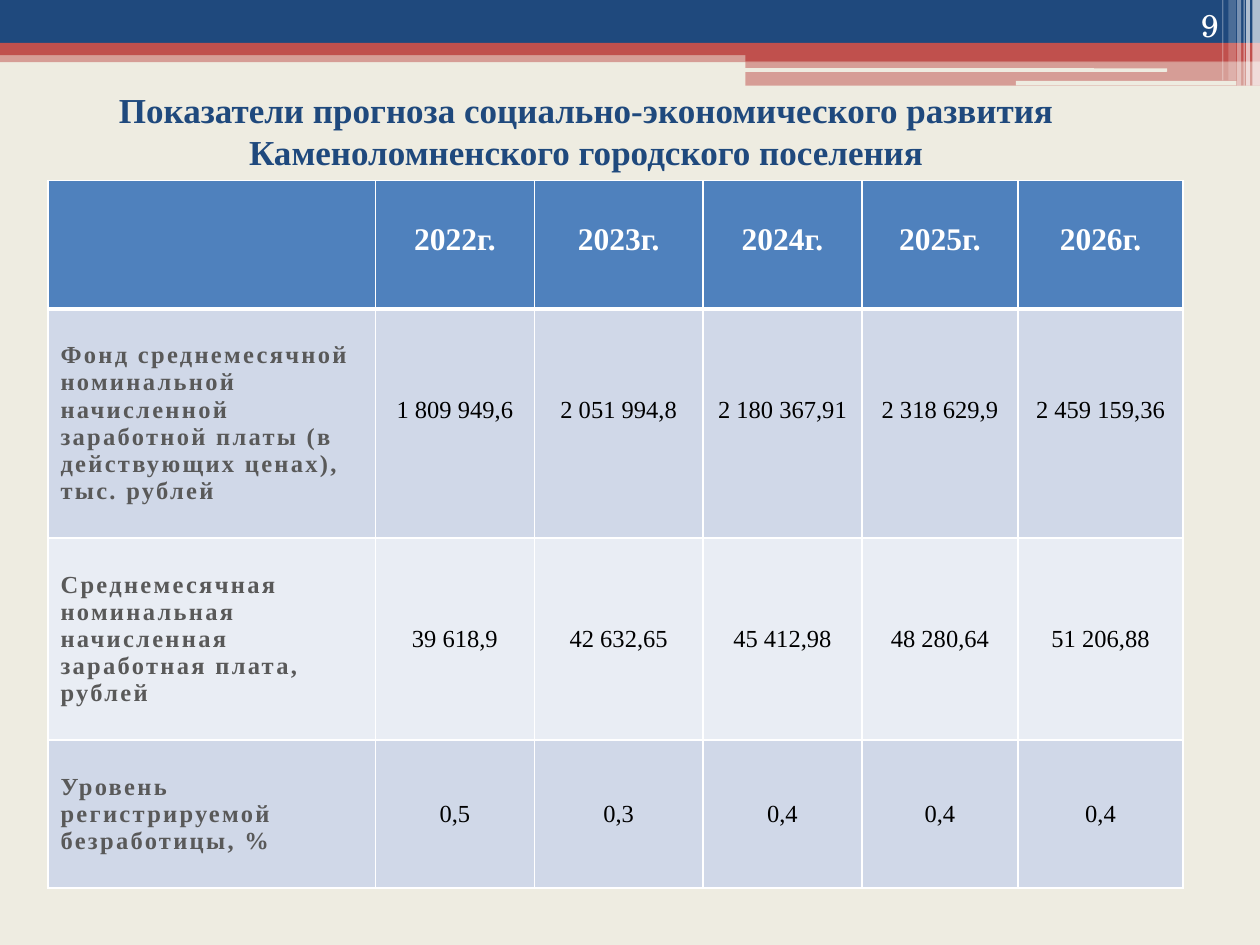
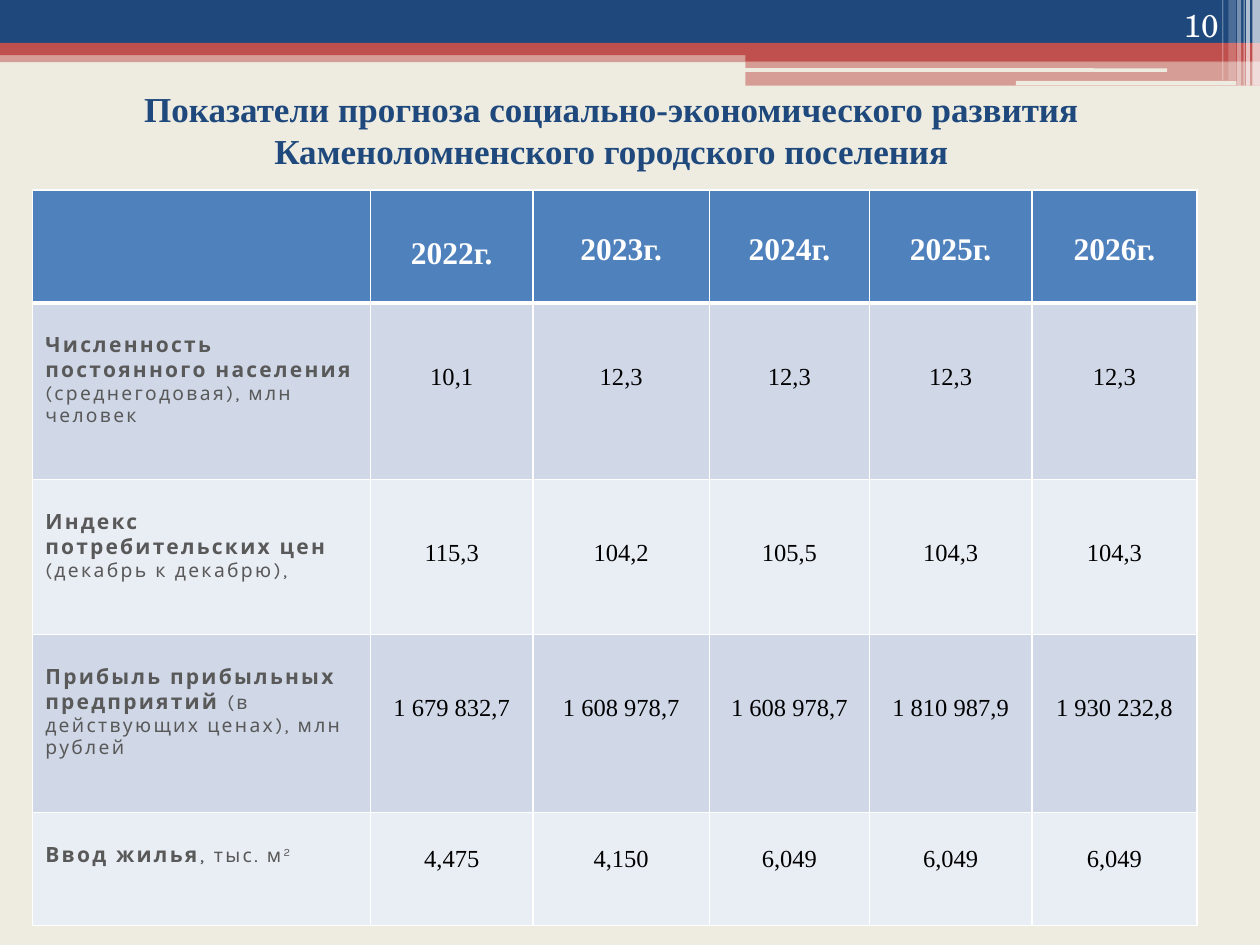
from typing import NamedTuple

import pptx
import pptx.dml.color
import pptx.enum.shapes
import pptx.enum.text
import pptx.oxml
import pptx.oxml.ns
import pptx.util

Pt = pptx.util.Pt
ALIGN = pptx.enum.text.PP_ALIGN
ANCHOR = pptx.enum.text.MSO_ANCHOR
SHAPE = pptx.enum.shapes.MSO_SHAPE

NAVY, RED, CREAM, WHITE = "1F497D", "C0504D", "EEECE1", "FFFFFF"
BLUE, GREY, BLACK = "4F81BD", "595959", "000000"
ROW_FILLS = ("D0D8E8", "E9EDF4")
SERIF, NUMBER_FONT, LABEL_FONT = "Times New Roman", "TeX Gyre Schola", "Karla"
TITLE = ("Показатели прогноза социально-экономического развития "
         "Каменоломненского городского поселения")
YEARS = [f"{year}г." for year in range(2022, 2027)]


class Box(NamedTuple):
    left: float
    top: float
    width: float
    height: float


class Band(NamedTuple):
    box: Box
    color: str
    opacity: int = 100
    rounded: bool = False


class Span(NamedTuple):
    text: str
    size: float = 14
    bold: bool = True
    superscript: bool = False


class Row(NamedTuple):
    height: float
    label: list[Span]
    values: list[str]
    label_drop: float
    value_drop: float


class Indicators(NamedTuple):
    number: int
    title_box: Box
    left: float
    top: float
    widths: list[float]
    header_height: float
    header_drops: list[float]
    label_font: str
    rows: list[Row]


BANDS = [
    Band(Box(0, 29, 720, 6.5), RED, 50),
    Band(Box(0, 0, 720, 24.5), NAVY),
    Band(Box(0, 24.5, 720, 7), RED),
    Band(Box(426, 28, 294, 7), RED),
    Band(Box(426, 35, 294, 14), RED, 50),
    Band(Box(425.5, 39, 241.5, 2), CREAM, rounded=True),
    Band(Box(580.5, 46.2, 126, 2.6), CREAM, rounded=True),
    Band(Box(715.7, 0, 4.3, 49), WHITE, 65),
    Band(Box(712.1, 0, 2.2, 49), WHITE, 65),
    Band(Box(710.6, 0, 0.7, 49), WHITE, 60),
    Band(Box(707, 0, 2.2, 49), WHITE, 40),
    Band(Box(702, 0, 4.3, 46), WHITE, 20),
    Band(Box(698.4, 0, 0.7, 46), WHITE, 30),
]

# Text drops are the distances from a cell's top edge to its text.
SLIDES = [
    Indicators(
        9, Box(8.6, 46, 648, 57), 27.4, 103, [187.2, 90.7, 96.5, 90.7, 89.3, 94.3],
        73.5, [24] * 5, SERIF, [
            Row(131, [Span("Фонд среднемесячной номинальной начисленной заработной платы "
                           "(в действующих ценах), тыс. рублей")],
                ["1 809 949,6", "2 051 994,8", "2 180 367,91", "2 318 629,9",
                 "2 459 159,36"], 19, 50),
            Row(115.5, [Span("Среднемесячная номинальная начисленная заработная плата, "
                             "рублей")],
                ["39 618,9", "42 632,65", "45 412,98", "48 280,64", "51 206,88"], 19, 50),
            Row(84.5, [Span("Уровень регистрируемой безработицы, %")],
                ["0,5", "0,3", "0,4", "0,4", "0,4"], 19, 34.5),
        ]),
    Indicators(
        10, Box(10, 40.3, 674, 67.7), 18.7, 108.6, [193, 92.9, 100.8, 91.4, 92.9, 94.3],
        64.5, [26.3] + [24] * 4, LABEL_FONT, [
            Row(101, [Span("Численность постоянного населения ", 12),
                      Span("(среднегодовая), млн человек", 11, False)],
                ["10,1", "12,3", "12,3", "12,3", "12,3"], 17.6, 34.5),
            Row(88.6, [Span("Индекс потребительских цен ", 12),
                       Span("(декабрь к декабрю),", 11, False)],
                ["115,3", "104,2", "105,5", "104,3", "104,3"], 17.6, 34.5),
            Row(101.7, [Span("Прибыль прибыльных предприятий ", 12),
                        Span("(в действующих ценах), млн рублей", 11, False)],
                ["1 679 832,7", "1 608 978,7", "1 608 978,7", "1 810 987,9",
                 "1 930 232,8"], 17.6, 34.5),
            Row(64.6, [Span("Ввод жилья", 12), Span(", ", 12, False),
                       Span("тыс. м", 11, False), Span("2", 11, False, True)],
                ["4,475", "4,150", "6,049", "6,049", "6,049"], 17.6, 19),
        ]),
]


def rgb(color: str) -> pptx.dml.color.RGBColor:
    return pptx.dml.color.RGBColor.from_string(color)


def points(box: Box) -> list[int]:
    return [Pt(v) for v in box]


def add_text(p, text: str, *, size: float, color: str, font: str = SERIF,
             bold: bool = False, align=ALIGN.LEFT, spacing: float = 0,
             superscript: bool = False) -> None:
    p.alignment = align
    r = p.add_run()
    r.text = text
    r.font.size, r.font.name, r.font.bold = Pt(size), font, bold
    r.font.color.rgb = rgb(color)
    rpr = r._r.get_or_add_rPr()
    if spacing:
        rpr.set("spc", str(round(spacing * 100)))
    if superscript:
        rpr.set("baseline", "30000")


def add_band(s, band: Band):
    kind = SHAPE.ROUNDED_RECTANGLE if band.rounded else SHAPE.RECTANGLE
    sp = s.shapes.add_shape(kind, *points(band.box))
    sp.shadow.inherit = False
    sp.line.fill.background()
    sp.fill.solid()
    sp.fill.fore_color.rgb = rgb(band.color)
    if band.opacity < 100:
        clr = sp._element.spPr.find(".//" + pptx.oxml.ns.qn("a:srgbClr"))
        clr.append(pptx.oxml.parse_xml(
            f'<a:alpha {pptx.oxml.ns.nsdecls("a")} val="{band.opacity * 1000}"/>'))
    return sp


def add_bands_to_layout(s) -> None:
    """Draw the bands through a slide, then hand them to its layout."""
    tree = s.slide_layout.shapes._spTree
    for i, band in enumerate(BANDS):
        el = add_band(s, band)._element
        el.nvSpPr.cNvPr.set("id", str(100 + i))
        tree.insert(2 + i, el)


def set_title(s, box: Box) -> None:
    sp = s.shapes.title
    sp.left, sp.top, sp.width, sp.height = points(box)
    tf = sp.text_frame
    tf.word_wrap, tf.auto_size = True, pptx.enum.text.MSO_AUTO_SIZE.NONE
    tf.vertical_anchor, tf.margin_left = ANCHOR.MIDDLE, Pt(12)
    add_text(tf.paragraphs[0], TITLE, size=20, color=NAVY, bold=True, align=ALIGN.CENTER)


def add_number(s, number: int) -> None:
    tf = s.shapes.add_textbox(*points(Box(643.7, 0, 59.8, 28.8))).text_frame
    tf.word_wrap, tf.vertical_anchor = True, ANCHOR.BOTTOM
    add_text(tf.paragraphs[0], str(number), size=18, color=WHITE, font=NUMBER_FONT,
             align=ALIGN.RIGHT)


def format_cell(cell, fill: str, drop: float, top: float = 1, bottom: float = 1) -> None:
    tcpr = cell._tc.get_or_add_tcPr()
    for side, width in (("L", 1), ("R", 1), ("T", top), ("B", bottom)):
        tcpr.append(pptx.oxml.parse_xml(
            f'<a:ln{side} {pptx.oxml.ns.nsdecls("a")} w="{Pt(width)}"><a:solidFill>'
            f'<a:srgbClr val="{WHITE}"/></a:solidFill></a:ln{side}>'))
    cell.fill.solid()
    cell.fill.fore_color.rgb = rgb(fill)
    cell.margin_top = Pt(drop)


def add_indicators(s, data: Indicators) -> None:
    heights = [data.header_height] + [row.height for row in data.rows]
    box = Box(data.left, data.top, sum(data.widths), sum(heights))
    table = s.shapes.add_table(len(heights), len(data.widths), *points(box)).table
    table.first_row = table.horz_banding = False
    for column, width in zip(table.columns, data.widths):
        column.width = Pt(width)
    for table_row, height in zip(table.rows, heights):
        table_row.height = Pt(height)

    format_cell(table.cell(0, 0), BLUE, 3.6, bottom=3)
    for c, (year, drop) in enumerate(zip(YEARS, data.header_drops), 1):
        cell = table.cell(0, c)
        format_cell(cell, BLUE, drop, bottom=3)
        add_text(cell.text_frame.paragraphs[0], year, size=18, color=WHITE, bold=True,
                 align=ALIGN.CENTER)

    for i, row in enumerate(data.rows):
        fill, top = ROW_FILLS[i % 2], 1 if i else 3
        cell = table.cell(i + 1, 0)
        format_cell(cell, fill, row.label_drop, top)
        for span in row.label:
            add_text(cell.text_frame.paragraphs[0], span.text, size=span.size, color=GREY,
                     font=data.label_font, bold=span.bold, spacing=1.3,
                     superscript=span.superscript)
        for c, value in enumerate(row.values, 1):
            cell = table.cell(i + 1, c)
            format_cell(cell, fill, row.value_drop, top)
            add_text(cell.text_frame.paragraphs[0], value, size=14, color=BLACK,
                     align=ALIGN.CENTER)


def main() -> None:
    prs = pptx.Presentation()
    prs.slide_width, prs.slide_height = Pt(720), Pt(540)
    background = prs.slide_master.background.fill
    background.solid()
    background.fore_color.rgb = rgb(CREAM)
    layout = prs.slide_layouts.get_by_name("Title Only")
    for i, data in enumerate(SLIDES):
        s = prs.slides.add_slide(layout)
        if i == 0:
            add_bands_to_layout(s)
        set_title(s, data.title_box)
        add_indicators(s, data)
        add_number(s, data.number)
    prs.save("out.pptx")


if __name__ == "__main__":
    main()
